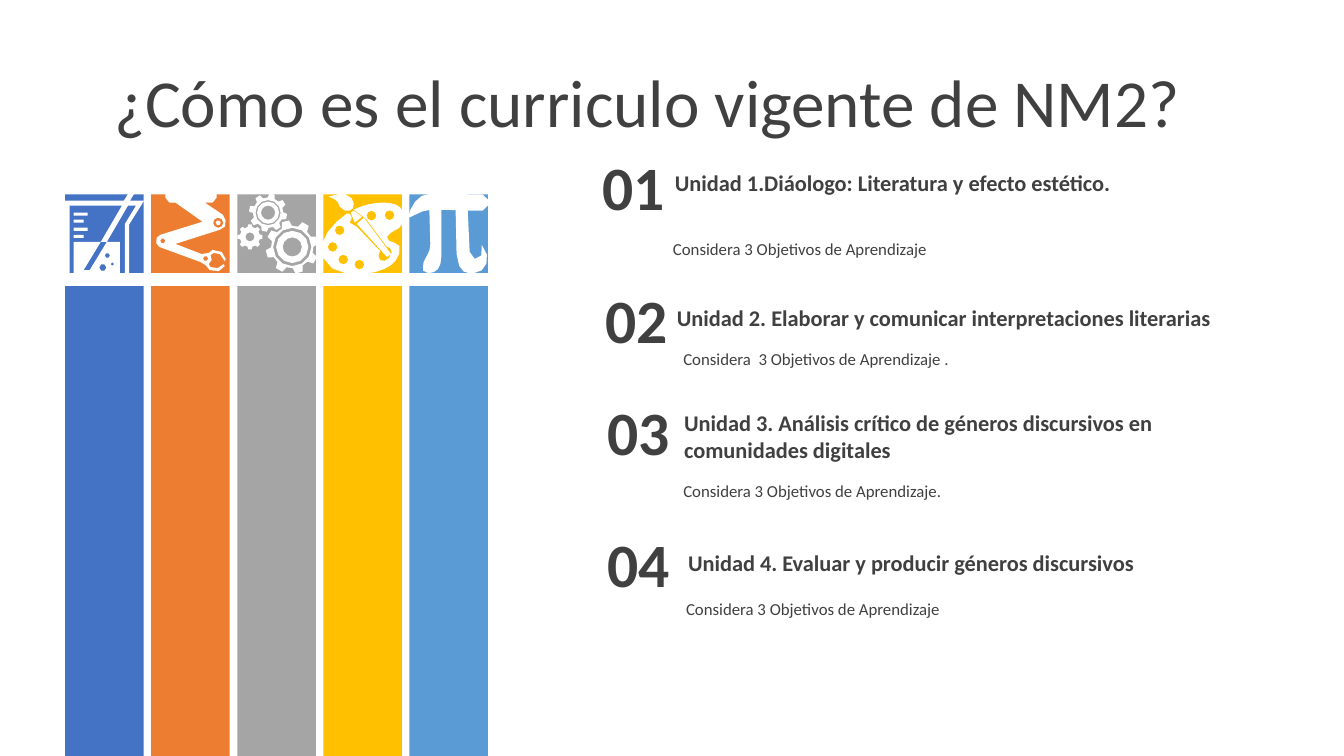
from math import cos, dist, radians, sin

from pptx import Presentation
from pptx.dml.color import RGBColor
from pptx.enum.shapes import MSO_SHAPE as Shape
from pptx.enum.text import MSO_ANCHOR as Anchor, MSO_AUTO_SIZE as AutoSize, PP_ALIGN as Align
from pptx.util import Cm, Pt

DARK_GRAY = RGBColor(0x40, 0x40, 0x40)
WHITE = RGBColor(0xFF, 0xFF, 0xFF)
BLUE = RGBColor(0x44, 0x72, 0xC4)
ORANGE = RGBColor(0xED, 0x7D, 0x31)
GRAY = RGBColor(0xA5, 0xA5, 0xA5)
GOLD = RGBColor(0xFF, 0xC0, 0x00)
LIGHT_BLUE = RGBColor(0x5B, 0x9B, 0xD5)
FONT = "Calibri"
ICON_UNIT = Cm(0.0254)

presentation = Presentation()
presentation.slide_width = Cm(33.87)
presentation.slide_height = Cm(19.05)
slide = presentation.slides.add_slide(presentation.slide_layouts[5])


def circle(x, y, radius):
    step = 60 if radius < 4 else 45 if radius < 6 else 30
    return [(x + radius * cos(radians(a)), y + radius * sin(radians(a))) for a in range(0, 360, step)]


def add_icon(contours):
    """Draw contours whose items are a point (x, y) or a Bézier curve (x1, y1, x2, y2, x, y)."""
    builder = None
    for contour in contours:
        points = []
        for item in contour:
            if len(item) == 2:
                points.append(item)
                continue
            x0, y0 = points[-1]
            x1, y1, x2, y2, x3, y3 = item
            steps = max(1, min(4, round(dist((x0, y0), (x3, y3)) / 5)))
            for step in range(1, steps + 1):
                t = step / steps
                u = 1 - t
                points.append((
                    u**3 * x0 + 3 * u * u * t * x1 + 3 * u * t * t * x2 + t**3 * x3,
                    u**3 * y0 + 3 * u * u * t * y1 + 3 * u * t * t * y2 + t**3 * y3))
        points = [(x * ICON_UNIT, y * ICON_UNIT) for x, y in points]
        if builder is None:
            builder = slide.shapes.build_freeform(*points[0])
        else:
            builder.move_to(*points[0])
        builder.add_line_segments(points[1:], close=True)
    icon = builder.convert_to_shape()
    icon.shadow.inherit = False
    icon.fill.solid()
    icon.fill.fore_color.rgb = WHITE
    icon.line.fill.background()


# Title
title = slide.shapes.title
title.left, title.top, title.width, title.height = Cm(2.62), Cm(1.37), Cm(28.73), Cm(2.31)
title.text_frame.auto_size = AutoSize.NONE
title.text_frame.word_wrap = True
title.text_frame.vertical_anchor = Anchor.MIDDLE
paragraph = title.text_frame.paragraphs[0]
paragraph.alignment = Align.LEFT
run = paragraph.add_run()
run.text = "¿Cómo es el curriculo vigente de NM2?"
run.font.name = FONT
run.font.size = Pt(48)
run.font.color.rgb = DARK_GRAY

# Units: (text, left, top, width, height) for number, heading and detail
units = [
    (("01", 14.63, 3.63, 2.67, 2.67),
     ("Unidad 1.Diáologo: Literatura y efecto estético.", 16.71, 4.14, 14.4, 0.94),
     ("Considera 3 Objetivos de Aprendizaje", 16.71, 5.89, 12.19, 0.76)),
    (("02", 14.71, 6.99, 2.67, 2.13),
     ("Unidad 2. Elaborar y comunicar interpretaciones literarias", 16.76, 7.54, 14.61, 0.94),
     ("Considera  3 Objetivos de Aprendizaje .", 16.97, 8.66, 12.52, 0.76)),
    (("03", 14.76, 9.8, 2.67, 2.13),
     ("Unidad 3. Análisis crítico de géneros discursivos en comunidades digitales",
      16.94, 10.19, 14.17, 1.63),
     ("Considera 3 Objetivos de Aprendizaje.", 16.97, 11.99, 12.52, 0.76)),
    (("04", 14.76, 13.13, 2.67, 2.13),
     ("Unidad 4. Evaluar y producir géneros discursivos", 17.04, 13.72, 14.86, 0.94),
     ("Considera 3 Objetivos de Aprendizaje", 17.04, 14.96, 12.52, 0.76)),
]
# Size, bold, alignment and side inset of number, heading and detail
styles = [(44, True, Align.CENTER, 0.3), (16, True, Align.LEFT, 0.3), (12, False, Align.LEFT, 0.25)]
for unit in units:
    for (text, *box), (size, bold, alignment, inset) in zip(unit, styles):
        frame = slide.shapes.add_textbox(*[Cm(length) for length in box]).text_frame
        frame.word_wrap = True
        frame.margin_left = frame.margin_right = Cm(inset)
        paragraph = frame.paragraphs[0]
        paragraph.alignment = alignment
        run = paragraph.add_run()
        run.text = text
        run.font.name = FONT
        run.font.size = Pt(size)
        run.font.bold = bold
        run.font.color.rgb = DARK_GRAY

# Icon tiles with a bar below each
for column, color in enumerate([BLUE, ORANGE, GRAY, GOLD, LIGHT_BLUE]):
    for top, height in [(4.9, 1.98), (7.21, 11.84)]:
        block = slide.shapes.add_shape(
            Shape.RECTANGLE, Cm(1.64 + 2.17 * column), Cm(top), Cm(1.98), Cm(height))
        block.shadow.inherit = False
        block.fill.solid()
        block.fill.fore_color.rgb = color
        block.line.fill.background()

# Flask
scale_marks = [
    [(73, y), (right, y), (right, y + 3), (73, y + 3)]
    for y, right in [(211, 87), (218, 83), (226, 87), (233, 83)]]
add_icon(scale_marks + [
    circle(102, 265.5, 3.5), circle(111.5, 262, 1.5), circle(106.5, 253.5, 2.5),
    [(73, 240), (100, 240), (83, 268), (89, 268), (106, 240), (119, 240), (119, 273), (73, 273)],
    [(121, 204), (69, 204), (69, 277), (124, 277), (124, 222), (135, 204), (127, 204),
     (106, 240), (100, 240)],
    [(137, 176), (143, 176), (129, 199), (143, 199), (128, 223), (128, 282), (64, 282),
     (64, 199), (123, 199)],
])

# Robot arm
add_icon([
    circle(204, 256.5, 2.5), circle(161.5, 239, 2.5), circle(216.5, 221, 2.5),
    circle(216.5, 221, 5),
    [(164, 192), (215, 192), (215, 196), (211, 201), (203, 201), (221, 213),
     (224, 216, 225, 221, 223, 225), (218, 228), (174, 242), (200, 252), (207, 251),
     (211, 248), (220, 250), (224, 257), (223, 259), (218, 252), (212, 251), (209, 253),
     (210, 258), (207, 262), (209, 265), (216, 266), (222, 262), (223, 264), (217, 269),
     (208, 268), (204, 263), (199, 260), (158, 245), (155, 241), (154, 237, 156, 234, 159, 233),
     (201, 220), (174, 201), (168, 201), (164, 196)],
])

# Gears: centre, tip radius, root radius, first tooth angle, radii of the rings
gears = [
    (290, 245, 26.5, 21, 30, (19, 16, 9.5)),
    (266, 211, 19, 15, 12, (12.5, 11, 7)),
    (248, 235, 12.5, 10, 0, (4.5,)),
]
gear_contours = []
for x, y, tip, root, first_angle, rings in gears:
    gear_contours.append([
        (x + radius * cos(radians(angle + turn)), y + radius * sin(radians(angle + turn)))
        for angle in range(first_angle, first_angle + 360, 45)
        for radius, turn in [(root, -14), (tip, -8), (tip, 8), (root, 14)]])
    gear_contours += [circle(x, y, radius) for radius in rings]
add_icon(gear_contours)

# Palette and brush
paint_wells = [(356.5, 262.5), (340.5, 257.5), (330, 245), (337, 228.5), (368.5, 214), (386.5, 213.5)]
add_icon([circle(x, y, 4.8) for x, y in paint_wells] + [
    [(361, 216), (388, 252), (384, 255), (354, 222)],
    [(351, 209), (359, 215), (352, 221), (348, 211)],
    [(380, 201), (389, 201, 397, 203, 400, 210), (408, 228, 385, 228, 384, 235),
     (382, 243, 402, 237, 396, 252), (392, 262, 386, 266, 372, 270),
     (359, 274, 328, 275, 320, 255), (314, 238, 331, 221, 344, 212), (347, 212), (349, 216),
     (347, 221), (354, 225), (377, 249), (375, 252, 375, 256, 377, 258),
     (379, 260, 384, 259, 386, 256), (389, 253, 390, 248, 387, 246), (384, 245),
     (363, 217), (351, 208), (359, 204, 370, 201, 380, 201)],
    [(339, 192), (343, 193), (348, 194, 351, 199, 351, 202), (351, 206, 350, 208, 347, 209),
     (344, 210, 340, 209, 337, 205), (335, 199, 335, 199, 326, 195)],
])

# Pi: top stroke, left leg and right leg
pi_strokes = [
    [(484, 198), (484, 204), (479, 209), (455, 209, 449, 208, 428, 208),
     (416, 208, 405, 219, 405, 215), (407, 206, 414, 192, 427, 192), (479, 193)],
    [(425, 271), (420, 271, 418, 268, 420, 261), (423, 253, 427, 251, 427, 242),
     (426, 207), (438, 207), (438, 254), (438, 266, 433, 271, 425, 271)],
    [(470, 271), (464, 271, 455, 273, 453, 252), (452, 207), (464, 207), (466, 250),
     (468, 263, 483, 256, 478, 243), (489, 255, 482, 271, 470, 271)],
]
for stroke in pi_strokes:
    add_icon([stroke])

presentation.save("out.pptx")
